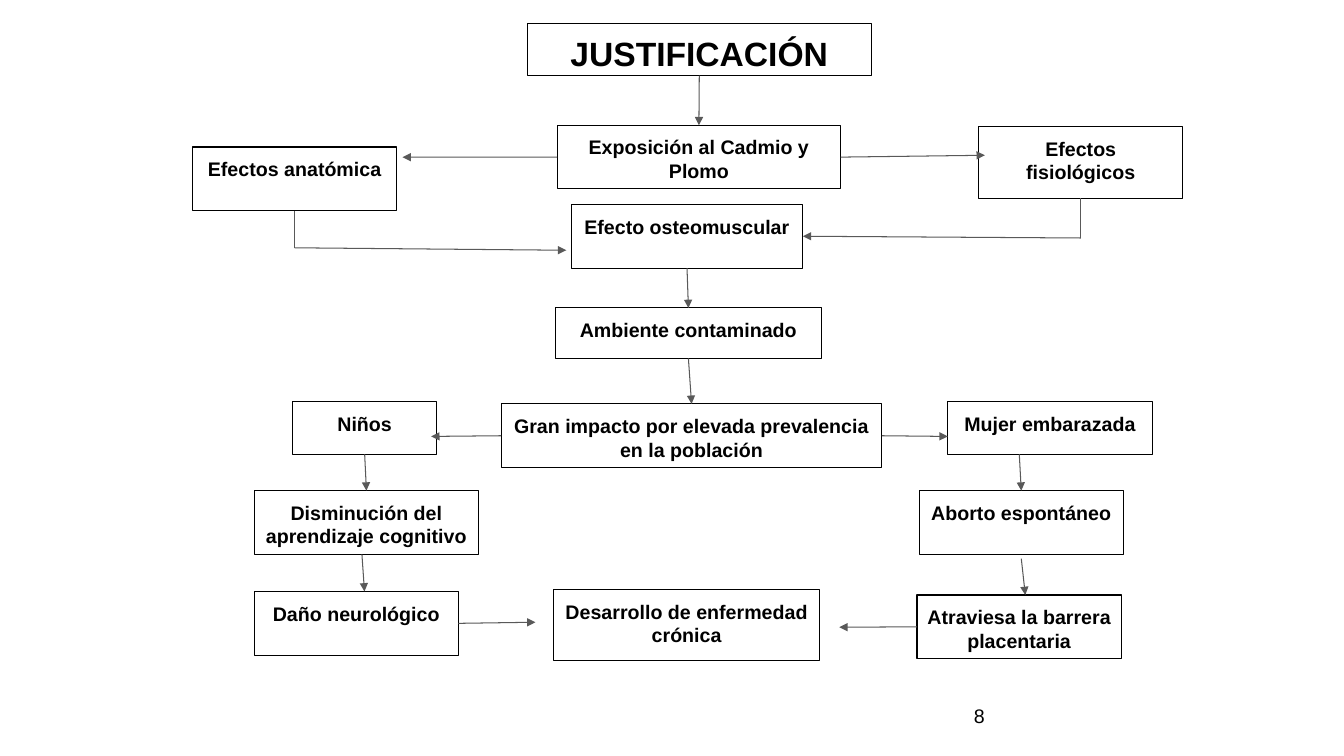
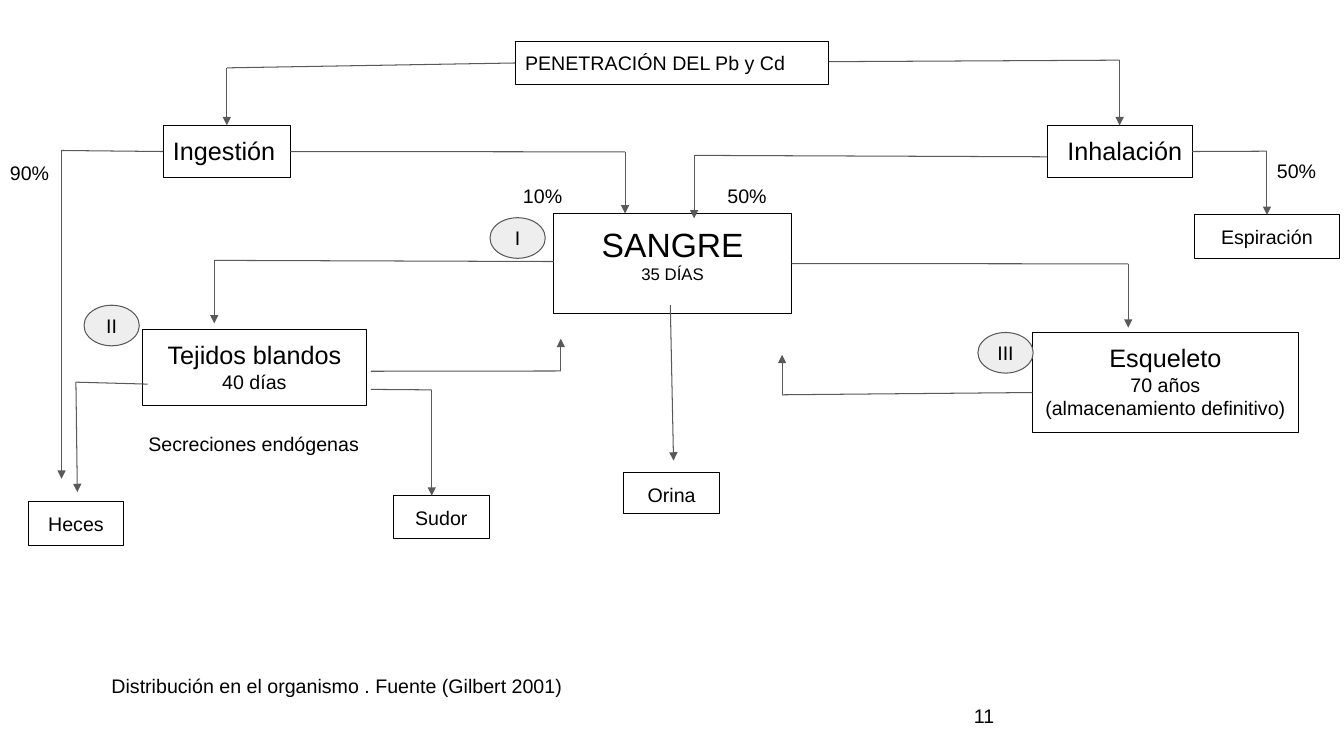
import dataclasses
import itertools

import lxml.etree
import pptx
import pptx.dml.color
import pptx.enum.shapes
import pptx.enum.text
import pptx.oxml.ns
import pptx.util

Pt = pptx.util.Pt
RGBColor = pptx.dml.color.RGBColor
Shape = pptx.enum.shapes.MSO_SHAPE
Align = pptx.enum.text.PP_ALIGN
Anchor = pptx.enum.text.MSO_ANCHOR
qn = pptx.oxml.ns.qn

BLACK = RGBColor(0x00, 0x00, 0x00)
GRAY = RGBColor(0x59, 0x59, 0x59)
PALE = RGBColor(0xEE, 0xEE, 0xEE)
WHITE = RGBColor(0xFF, 0xFF, 0xFF)
FONT = "Arial"
LINE_WIDTH = 0.75
INSET = 7.2


@dataclasses.dataclass(frozen=True)
class Box:
    left: float
    top: float
    width: float
    height: float

    def inner(self, left, top, width, height):
        return Box(self.left + left, self.top + top, width, height)

    def at(self, across, down, right=0, below=0):
        return (self.left + across * self.width + right,
                self.top + down * self.height + below)

    def lengths(self):
        return [Pt(value) for value in dataclasses.astuple(self)]


def apply(target, formats):
    for name, value in formats.items():
        setattr(target, name, value)


def write(frame, lines, bold=False, align=Align.CENTER, anchor=Anchor.TOP, vertical_inset=INSET):
    apply(frame, {
        "word_wrap": True,
        "vertical_anchor": anchor,
        "margin_left": Pt(INSET),
        "margin_right": Pt(INSET),
        "margin_top": Pt(vertical_inset),
        "margin_bottom": Pt(vertical_inset),
    })
    for index, (text, size) in enumerate(lines):
        para = frame.add_paragraph() if index else frame.paragraphs[0]
        para.alignment = align
        span = para.add_run()
        span.text = text
        apply(span.font, {"name": FONT, "size": Pt(size), "bold": bold})
        span.font.color.rgb = BLACK


def add_node(page, box, *lines, **style):
    node = page.shapes.add_shape(Shape.RECTANGLE, *box.lengths())
    node.shadow.inherit = False
    node.fill.background()
    node.line.color.rgb = BLACK
    node.line.width = Pt(LINE_WIDTH)
    write(node.text_frame, lines, **style)
    return box


def add_badge(page, box, text):
    badge = page.shapes.add_shape(Shape.OVAL, *box.lengths())
    badge.shadow.inherit = False
    badge.fill.solid()
    badge.fill.fore_color.rgb = PALE
    badge.line.color.rgb = GRAY
    badge.line.width = Pt(LINE_WIDTH)
    write(badge.text_frame, [(text, 14)], anchor=Anchor.MIDDLE)


def add_label(page, box, text, align=Align.LEFT, **style):
    label = page.shapes.add_textbox(*box.lengths())
    write(label.text_frame, [(text, 14)], align=align, **style)


def add_route(page, *points):
    for start, end in itertools.pairwise(points):
        connector = page.shapes.add_connector(
            pptx.enum.shapes.MSO_CONNECTOR.STRAIGHT,
            *[Pt(value) for value in start + end])
        connector.line.color.rgb = GRAY
        connector.line.width = Pt(LINE_WIDTH)
        properties = connector.element.spPr
        lxml.etree.SubElement(properties, qn("a:effectLst"))
    head = lxml.etree.SubElement(properties.find(qn("a:ln")), qn("a:tailEnd"))
    head.set("type", "triangle")


def add_page(deck, number):
    page = deck.slides.add_slide(deck.slide_layouts[6])
    page.background.fill.solid()
    page.background.fill.fore_color.rgb = WHITE
    add_label(page, Box(688.5, 499, 224, 37.5), str(number), vertical_inset=3.6)
    return page


def add_nodes(page, region, entries):
    return [add_node(page, region.inner(*place), (text, size), bold=True)
            for text, size, place in entries]


def causes(page, region):
    title, exposure, anatomy, physiology, muscle = add_nodes(page, region, [
        ("JUSTIFICACIÓN", 24, (239, 0, 246, 37.5)),
        ("Exposición al Cadmio y Plomo", 14, (260.5, 73, 202.5, 45.5)),
        ("Efectos anatómica", 14, (0, 88.5, 146, 45.5)),
        ("Efectos fisiológicos", 14, (561.5, 74, 146, 51)),
        ("Efecto osteomuscular", 14, (270.5, 129.5, 165.5, 45.5)),
    ])
    add_route(page, title.at(0.5, 1), exposure.at(0.5, 0))
    add_route(page, exposure.at(0, 0.5), anatomy.at(1, 0.16, 4))
    add_route(page, exposure.at(1, 0.5), physiology.at(0, 0.4, 4.5))
    add_route(page, anatomy.at(0.5, 1), anatomy.at(0.5, 1, 0, 26.5), muscle.at(0, 0.72, -3.5))
    add_route(page, physiology.at(0.5, 1), physiology.at(0.5, 1, 0, 28.5), muscle.at(1, 0.5))
    return muscle


def consequences(page, region, muscle):
    (setting, impact, children, mother, learning,
     abortion, damage, barrier, disease) = add_nodes(page, region, [
        ("Ambiente contaminado", 14, (215, 0, 190.5, 36)),
        ("Gran impacto por elevada prevalencia en la población", 14, (176.5, 68.5, 272, 45.5)),
        ("Niños", 14, (27.5, 67, 103, 37.5)),
        ("Mujer embarazada", 14, (495.5, 67, 146, 37.5)),
        ("Disminución del aprendizaje cognitivo", 14, (0, 130.5, 160.5, 45.5)),
        ("Aborto espontáneo", 14, (475, 130.5, 146, 45.5)),
        ("Daño neurológico", 14, (0, 202.5, 146, 45.5)),
        ("Atraviesa la barrera placentaria", 14, (473.5, 205, 146, 45.5)),
        ("Desarrollo de enfermedad crónica", 14, (214, 201, 190, 51)),
    ])
    for start, end in [
        (muscle.at(0.5, 1), setting.at(0.5, 0)),
        (setting.at(0.5, 1), impact.at(0.5, 0)),
        (impact.at(0, 0.5), children.at(1, 0.66, -4)),
        (impact.at(1, 0.5), mother.at(0, 0.66)),
        (children.at(0.5, 1), learning.at(0.5, 0)),
        (mother.at(0.35, 1), abortion.at(0.5, 0)),
        (learning.at(0.48, 1), damage.at(0.54, 0)),
        (abortion.at(0.5, 1, 0, 3), barrier.at(0.53, 0)),
        (damage.at(1, 0.5), disease.at(0, 0.46, -13)),
        (barrier.at(0, 0.5), disease.at(1, 0.53, 14)),
    ]:
        add_route(page, start, end)


def reservoirs(page, region):
    blood = add_node(page, region.inner(335.5, 0, 170, 71.5), ("SANGRE", 24), ("35 DÍAS", 12))
    tissue = add_node(page, region.inner(42, 83, 159.5, 54), ("Tejidos blandos", 18), ("40 días", 14))
    skeleton = add_node(page, region.inner(677.5, 85, 190, 71.5), ("Esqueleto", 18),
                        ("70 años", 14), ("(almacenamiento definitivo)", 14))
    for text, left, top in [("I", 290, 3), ("II", 0, 65.5), ("III", 638.5, 85)]:
        add_badge(page, region.inner(left, top, 39.5, 29), text)
    add_route(page, blood.at(0, 0.48), tissue.at(0.32, 0, 0, -49.5), tissue.at(0.32, 0, 0, -4.5))
    add_route(page, blood.at(1, 0.5), skeleton.at(0.36, 0, 0, -49), skeleton.at(0.36, 0, 0, -3.5))
    add_route(page, tissue.at(1, 0.55, 3.5), blood.at(0.03, 1, 0, 41), blood.at(0.03, 1, 0, 18))
    add_route(page, skeleton.at(0, 0.6), blood.at(0.96, 1, 0, 58), blood.at(0.96, 1, 0, 29.5))
    return blood, tissue


def intake(page, region, blood):
    header = add_node(page, region.inner(368, 0, 224, 31), ("PENETRACIÓN DEL Pb y Cd", 14),
                      align=Align.LEFT, anchor=Anchor.MIDDLE)
    ingestion = add_node(page, region.inner(116.5, 60, 91, 37.5), ("Ingestión", 18), align=Align.LEFT)
    inhalation = add_node(page, region.inner(748, 60, 103.5, 37.5), ("Inhalación", 18), align=Align.RIGHT)
    breath = add_node(page, region.inner(853, 124, 104, 31), ("Espiración", 14))
    for text, place in [
        ("90%", (0, 78, 50.5, 45.5)),
        ("10%", (366.5, 94.5, 50.5, 31)),
        ("50%", (512.5, 94.5, 68.5, 19.5)),
        ("50%", (905, 76.5, 52, 19.5)),
    ]:
        add_label(page, region.inner(*place), text)
    add_route(page, header.at(0, 0.5), ingestion.at(0.5, 0, 0, -41), ingestion.at(0.5, 0))
    add_route(page, header.at(1, 0.47), inhalation.at(0.5, 0, 0, -46.5), inhalation.at(0.5, 0))
    add_route(page, ingestion.at(1, 0.5), blood.at(0.3, 0, 0, -44), blood.at(0.3, 0))
    add_route(page, inhalation.at(0, 0.6), blood.at(0.59, 0, 0, -41.5), blood.at(0.59, 0, 0, 3.5))
    add_route(page, inhalation.at(1, 0.5), breath.at(0.5, 0, 0, -45.5), breath.at(0.5, 0))
    return ingestion


def excretion(page, region, ingestion, blood, tissue):
    feces, sweat, urine = [
        add_node(page, region.inner(left, top, 68.5, height), (text, 14))
        for text, left, top, height in [
            ("Heces", 0, 57.5, 31), ("Sudor", 261, 53, 31), ("Orina", 425.5, 36.5, 29)]]
    add_label(page, region.inner(73, 0, 176.5, 23), "Secreciones endógenas", Align.CENTER)
    add_route(page, ingestion.at(0, 0.5), feces.at(0.35, 0, 0, -251), feces.at(0.35, 0, 0, -16.5))
    add_route(page, tissue.at(0, 0.72, 3.5), feces.at(0.5, 0, 0, -85.5), feces.at(0.5, 0, 1, -7))
    add_route(page, tissue.at(1, 0.79, 3.5), sweat.at(0.4, 0, 0, -75.5), sweat.at(0.4, 0))
    add_route(page, blood.at(0.49, 1, 0, -6), urine.at(0.52, 0, 0, -8.5))


def justification_page(deck):
    page = add_page(deck, 8)
    muscle = causes(page, Box(137.5, 16.5, 707.5, 175))
    consequences(page, Box(181.5, 220, 641.5, 252), muscle)


def distribution_page(deck):
    page = add_page(deck, 11)
    blood, tissue = reservoirs(page, Box(60, 152.5, 867.5, 156.5))
    ingestion = intake(page, Box(0, 29.5, 957, 155), blood)
    excretion(page, Box(20, 301, 494, 88.5), ingestion, blood, tissue)
    add_label(page, Box(72.5, 474, 600, 31), "Distribución en el organismo . Fuente (Gilbert 2001)")


def main():
    deck = pptx.Presentation()
    apply(deck, {"slide_width": Pt(960), "slide_height": Pt(540)})
    justification_page(deck)
    distribution_page(deck)
    deck.save("out.pptx")


if __name__ == "__main__":
    main()
